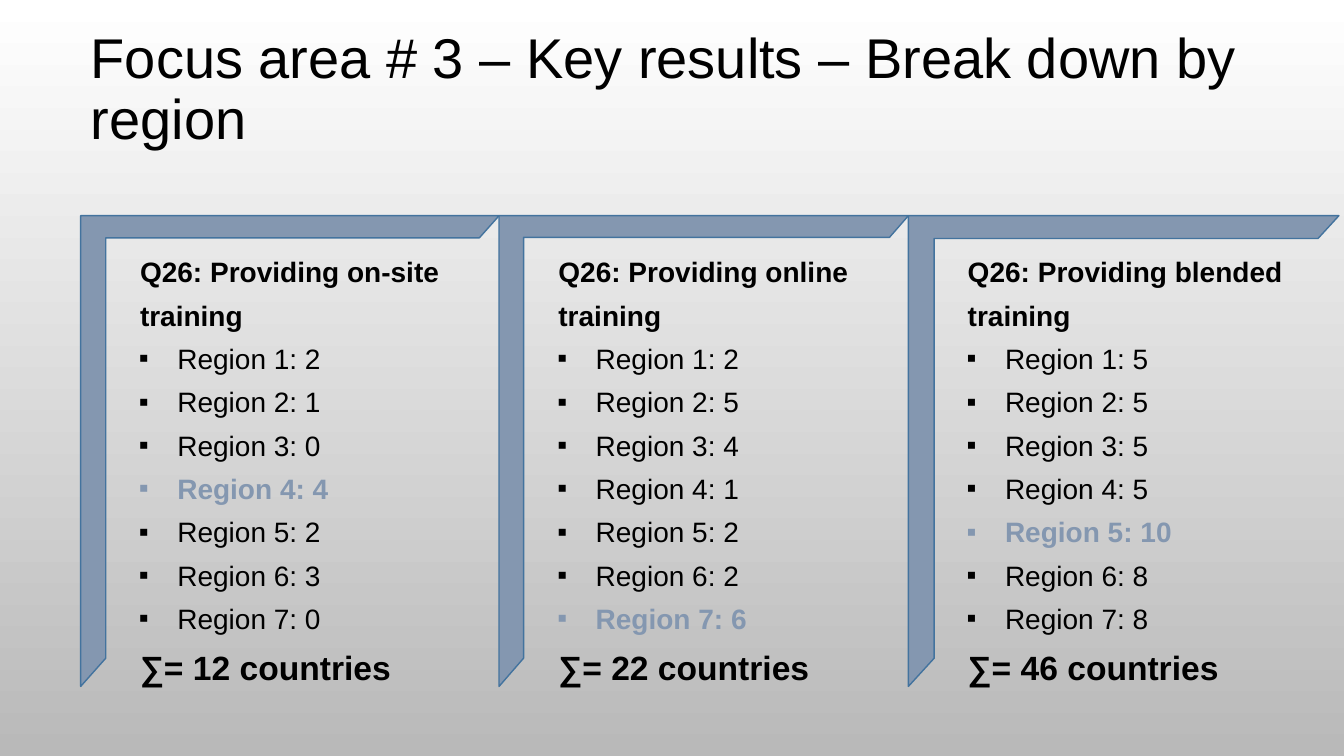
from lxml import etree
from pptx import Presentation
from pptx.dml.color import RGBColor
from pptx.enum.shapes import MSO_SHAPE
from pptx.enum.text import MSO_ANCHOR, PP_ALIGN
from pptx.oxml.ns import qn
from pptx.util import Inches, Pt

HALF_FRAME = MSO_SHAPE.HALF_FRAME
TOP, BOTTOM = MSO_ANCHOR.TOP, MSO_ANCHOR.BOTTOM
LEFT = PP_ALIGN.LEFT

# Content
TITLE = "Focus area # 3 – Key results – Break down by region"
# Each panel: heading, countries per region, highlighted region, total, panel width
PANELS = [
    ("Q26: Providing on-site training", [2, 1, 0, 4, 2, 3, 0], 4, 12, 4.15),
    ("Q26: Providing online training", [2, 5, 4, 1, 2, 2, 6], 7, 22, 4.06),
    ("Q26: Providing blended training", [5, 5, 5, 5, 10, 8, 8], 5, 46, 4.27),
]

# Theme
THEME = {
    "font": "Arial",
    "text": RGBColor(0x00, 0x00, 0x00),
    "accent": RGBColor(0x84, 0x97, 0xB0),
    "outline": RGBColor(0x43, 0x73, 0x9E),
    "background": (RGBColor(0xFF, 0xFF, 0xFF), RGBColor(0xB9, 0xB9, 0xB9)),
    "title_size": 40,
    "body_size": 20,
    "total_size": 24,
}

# Layout, in inches
PANEL_LEFT, PANEL_TOP, PANEL_HEIGHT = 0.8, 2.14, 4.67
TEXT_INSET_TOP = 0.29
TEXT_INDENT, BULLET_INDENT, BULLET_HANG = 0.49, 0.86, -0.38


def write(paragraph, text, size=THEME["body_size"], color=THEME["text"],
          bold=False, spacing=1.29, indent=TEXT_INDENT, hang=0, bullet=None):
    paragraph.alignment = LEFT
    paragraph.line_spacing = spacing
    paragraph.space_before = paragraph.space_after = Pt(0)
    properties = paragraph._p.get_or_add_pPr()
    properties.set("marL", str(Inches(indent)))
    properties.set("indent", str(Inches(hang)))
    if bullet:
        etree.SubElement(properties, qn("a:buFont"), typeface=THEME["font"])
        etree.SubElement(properties, qn("a:buChar"), char=bullet)
    run = paragraph.add_run()
    run.text = text
    run.font.name = THEME["font"]
    run.font.size = Pt(size)
    run.font.bold = bold
    run.font.color.rgb = color


def add_panel(slide, left, heading, counts, highlight, total, width):
    panel = slide.shapes.add_shape(HALF_FRAME, Inches(left), Inches(PANEL_TOP),
                                   Inches(width), Inches(PANEL_HEIGHT))
    panel.adjustments[0] = 0.053
    panel.adjustments[1] = 0.06
    panel.shadow.inherit = False
    panel.fill.solid()
    panel.fill.fore_color.rgb = THEME["accent"]
    panel.line.color.rgb = THEME["outline"]
    panel.line.width = Pt(1)

    frame = panel.text_frame
    frame.word_wrap = True
    frame.vertical_anchor = TOP
    frame.margin_top = Inches(TEXT_INSET_TOP)
    write(frame.paragraphs[0], heading, bold=True)
    for region, count in enumerate(counts, start=1):
        top_region = region == highlight
        write(frame.add_paragraph(), f"Region {region}: {count}", bold=top_region,
              color=THEME["accent"] if top_region else THEME["text"],
              indent=BULLET_INDENT, hang=BULLET_HANG, bullet="▪")
    write(frame.add_paragraph(), f"∑= {total} countries",
          size=THEME["total_size"], bold=True)


def main():
    deck = Presentation()
    deck.slide_width, deck.slide_height = Inches(13.33), Inches(7.5)
    slide = deck.slides.add_slide(deck.slide_layouts[5])

    # Background fading from top to bottom
    backdrop = slide.background.fill
    backdrop.gradient()
    backdrop.gradient_angle = 270
    for stop, color in zip(backdrop.gradient_stops, THEME["background"]):
        stop.color.rgb = color

    # Title
    title = slide.shapes.title
    title.left, title.top = Inches(0.8), Inches(0.27)
    title.width, title.height = Inches(11.81), Inches(1.28)
    title.text_frame.vertical_anchor = BOTTOM
    write(title.text_frame.paragraphs[0], TITLE, size=THEME["title_size"],
          spacing=0.9, indent=0)

    # Panels side by side
    left = PANEL_LEFT
    for heading, counts, highlight, total, width in PANELS:
        add_panel(slide, left, heading, counts, highlight, total, width)
        left += width

    deck.save("out.pptx")


if __name__ == "__main__":
    main()
